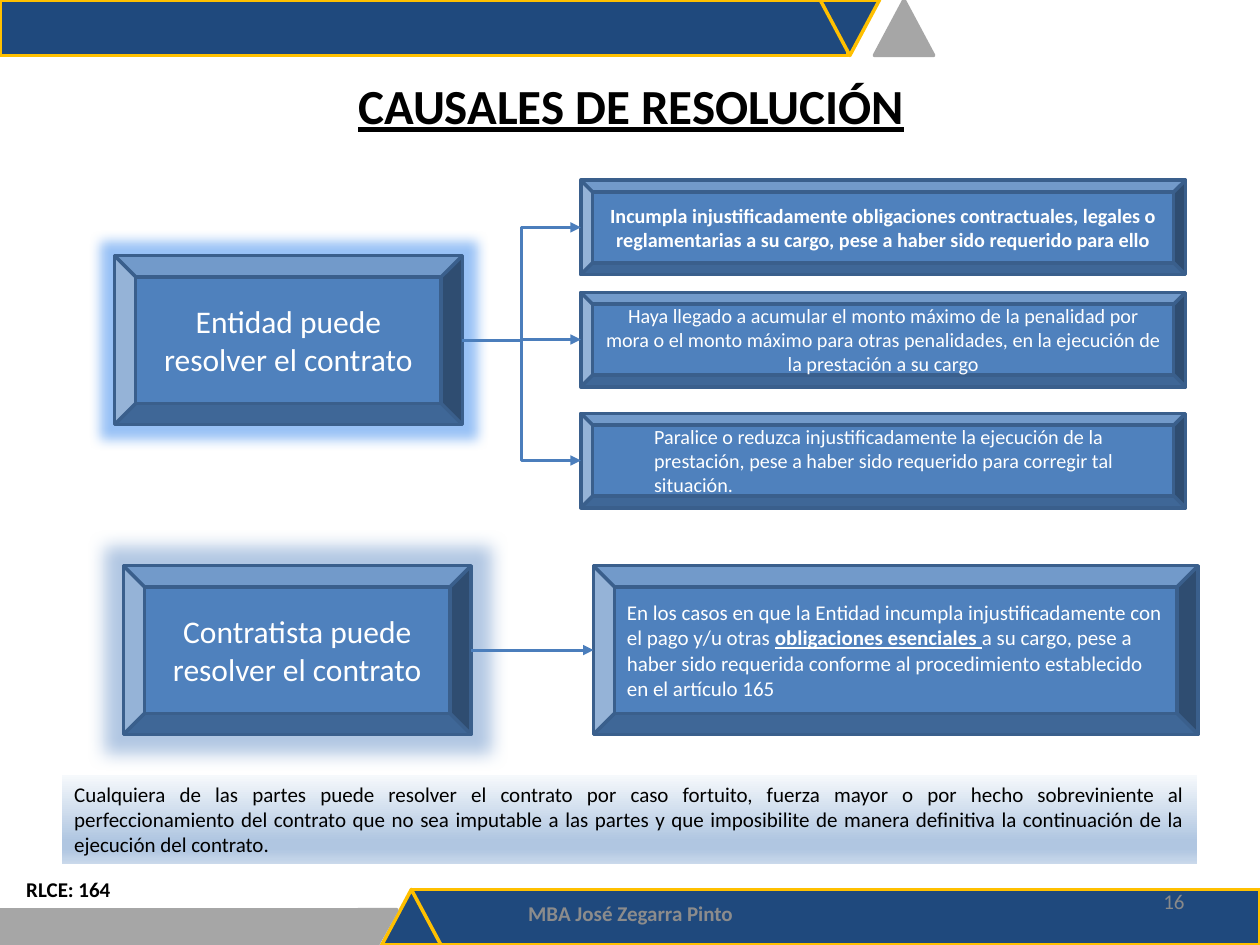
from lxml.etree import SubElement
from pptx import Presentation
from pptx.dml.color import RGBColor
from pptx.enum.shapes import MSO_CONNECTOR, MSO_SHAPE
from pptx.enum.text import MSO_ANCHOR, MSO_AUTO_SIZE, PP_ALIGN
from pptx.oxml.ns import qn
from pptx.util import Inches, Pt

COLORS = {
    "navy": "1F497D", "gold": "FFC000", "gray": "A6A6A6",
    "box": "4F81BD", "box_line": "3A5F8C", "arrow": "4B7EBC",
    "white": "FFFFFF", "black": "000000",
    "footer": "8C8C8C", "number": "898989",
    "entity_glow": "8DBBF5", "contractor_glow": "A9C1E0",
}
FONT = "Calibri"
TITLE = "CAUSALES DE RESOLUCIÓN"

# shape, left, top, width, height, rotation, fill, line
BAND, TRIANGLE = MSO_SHAPE.RECTANGLE, MSO_SHAPE.FLOWCHART_EXTRACT
DECORATION = [
    (BAND, 0, 0, 6.73, 0.44, 0, "navy", "gold"),
    (TRIANGLE, 6.51, 0, 0.47, 0.44, 180, "navy", "gold"),
    (TRIANGLE, 6.94, 0, 0.47, 0.44, 0, "gray", "gray"),
    (BAND, 3.27, 7.06, 6.73, 0.44, 0, "navy", "gold"),
    (BAND, 0, 7.22, 2.99, 0.28, 0, "gray", "gray"),
    (TRIANGLE, 3.03, 7.06, 0.47, 0.44, 0, "navy", "gold"),
    (TRIANGLE, 2.84, 7.22, 0.31, 0.28, 180, "gray", "gray"),
]

# Each cause: runs of (text, emphasis), top, alignment, indent
GROUPS = [
    {
        "party": "Entidad puede resolver el contrato",
        "left": 0.91, "top": 2.03, "glow": ("entity_glow", 0.19),
        "cause_left": 4.61, "cause_height": 0.75, "size": 11.5,
        "causes": [
            ([("Incumpla injustificadamente obligaciones contractuales, legales o "
               "reglamentarias a su cargo, pese a haber sido requerido para ello", "b")],
             1.43, PP_ALIGN.CENTER, 0),
            ([("Haya llegado a acumular el monto máximo de la penalidad por mora o el "
               "monto máximo para otras penalidades, en la ejecución de la prestación "
               "a su cargo", "")],
             2.32, PP_ALIGN.CENTER, 0),
            ([("Paralice o reduzca injustificadamente la ejecución de la prestación, "
               "pese a haber sido requerido para corregir tal situación.", "")],
             3.28, PP_ALIGN.LEFT, 0.39),
        ],
    },
    {
        "party": "Contratista puede resolver el contrato",
        "left": 0.98, "top": 4.49, "glow": ("contractor_glow", 0.28),
        "cause_left": 4.71, "cause_height": 1.34, "size": 12,
        "causes": [
            ([("En los casos en que la Entidad incumpla injustificadamente con el pago "
               "y/u otras ", ""),
              ("obligaciones esenciales ", "bu"),
              ("a su cargo, pese a haber sido requerida conforme al procedimiento "
               "establecido en el artículo 165", "")],
             4.49, PP_ALIGN.LEFT, 0),
        ],
    },
]
PARTY_WIDTH, PARTY_HEIGHT, CAUSE_WIDTH = 2.76, 1.34, 4.8

NOTE = ("Cualquiera de las partes puede resolver el contrato por caso fortuito, fuerza "
        "mayor o por hecho sobreviniente al perfeccionamiento del contrato que no sea "
        "imputable a las partes y que imposibilite de manera definitiva la continuación "
        "de la ejecución del contrato. ")
NOTE_STOPS = [(0, "F6F9FC"), (74, "B0C6E1"), (83, "B0C6E1"), (100, "CAD9EB")]

# text, box, alignment, anchor, wrap, colour, emphasis
LABELS = [
    ("MBA José Zegarra Pinto", (3.42, 7.05, 3.17, 0.4), PP_ALIGN.CENTER,
     MSO_ANCHOR.MIDDLE, True, "footer", "b"),
    ("16", (7.17, 6.95, 2.33, 0.4), PP_ALIGN.RIGHT, MSO_ANCHOR.MIDDLE, True, "number", ""),
    ("RLCE: 164", (0.11, 6.91, 0.88, 0.3), PP_ALIGN.LEFT, MSO_ANCHOR.TOP, False, "black", "b"),
]


def rgb(name):
    return RGBColor.from_string(COLORS[name])


def write(shape, runs, size, color, align, anchor=MSO_ANCHOR.MIDDLE, wrap=True):
    """Fill the first paragraph with (text, emphasis) runs; b is bold, u underlined."""
    frame = shape.text_frame
    frame.word_wrap = wrap
    frame.vertical_anchor = anchor
    paragraph = frame.paragraphs[0]
    paragraph.alignment = align
    for text, emphasis in runs:
        run = paragraph.add_run()
        run.text = text
        font = run.font
        font.name, font.size = FONT, Pt(size)
        font.bold, font.underline = "b" in emphasis, "u" in emphasis
        font.color.rgb = rgb(color)
    return paragraph


def add_block(slide, kind, box, fill, line):
    shape = slide.shapes.add_shape(kind, *map(Inches, box))
    shape.shadow.inherit = False
    shape.fill.solid()
    shape.fill.fore_color.rgb = rgb(fill)
    shape.line.color.rgb = rgb(line)
    shape.line.width = Pt(2)
    return shape


def add_glow(shape, color, radius):
    effects = shape._element.spPr.find(qn("a:effectLst"))
    glow = SubElement(effects, qn("a:glow"), rad=str(Inches(radius)))
    tint = SubElement(glow, qn("a:srgbClr"), val=COLORS[color])
    SubElement(tint, qn("a:alpha"), val="90000")


def add_arrow(slide, start, end):
    arrow = slide.shapes.add_connector(MSO_CONNECTOR.ELBOW, *map(Inches, start + end))
    arrow.line.color.rgb = rgb("arrow")
    arrow.line.width = Pt(1.75)
    SubElement(arrow.line._get_or_add_ln(), qn("a:tailEnd"), type="triangle")
    SubElement(arrow._element.spPr, qn("a:effectLst"))


def add_group(slide, group):
    left, top = group["left"], group["top"]
    party = add_block(slide, MSO_SHAPE.BEVEL, (left, top, PARTY_WIDTH, PARTY_HEIGHT),
                      "box", "box_line")
    add_glow(party, *group["glow"])
    write(party, [(group["party"], "")], 18, "white", PP_ALIGN.CENTER)
    start = (left + PARTY_WIDTH, top + PARTY_HEIGHT / 2)
    cause_left, height = group["cause_left"], group["cause_height"]
    for runs, cause_top, align, indent in group["causes"]:
        cause = add_block(slide, MSO_SHAPE.BEVEL,
                          (cause_left, cause_top, CAUSE_WIDTH, height), "box", "box_line")
        paragraph = write(cause, runs, group["size"], "white", align)
        if indent:
            paragraph._p.get_or_add_pPr().set("marL", str(Inches(indent)))
        add_arrow(slide, start, (cause_left, cause_top + height / 2))


def add_note(slide):
    note = slide.shapes.add_shape(BAND, *map(Inches, (0.49, 6.15, 9.01, 0.71)))
    note.shadow.inherit = False
    note.line.fill.background()
    note.fill.gradient()
    note.fill.gradient_angle = 270
    stops = note._element.spPr.find(qn("a:gradFill")).find(qn("a:gsLst"))
    for stop in list(stops):
        stops.remove(stop)
    for position, color in NOTE_STOPS:
        stop = SubElement(stops, qn("a:gs"), pos=str(position * 1000))
        SubElement(stop, qn("a:srgbClr"), val=color)
    write(note, [(NOTE, "")], 12, "black", PP_ALIGN.JUSTIFY, MSO_ANCHOR.TOP)


def main():
    presentation = Presentation()
    presentation.slide_width, presentation.slide_height = Inches(10), Inches(7.5)
    slide = presentation.slides.add_slide(presentation.slide_layouts[5])

    for kind, left, top, width, height, rotation, fill, line in DECORATION:
        add_block(slide, kind, (left, top, width, height), fill, line).rotation = rotation

    title = slide.shapes.title
    title.left, title.top, title.width, title.height = map(Inches, (2.68, 0.55, 4.66, 0.57))
    title.text_frame.auto_size = MSO_AUTO_SIZE.NONE
    write(title, [(TITLE, "bu")], 28, "black", PP_ALIGN.CENTER, MSO_ANCHOR.TOP, False)

    for group in GROUPS:
        add_group(slide, group)
    add_note(slide)
    for text, box, align, anchor, wrap, color, emphasis in LABELS:
        label = slide.shapes.add_textbox(*map(Inches, box))
        write(label, [(text, emphasis)], 12, color, align, anchor, wrap)

    presentation.save("out.pptx")


if __name__ == "__main__":
    main()
